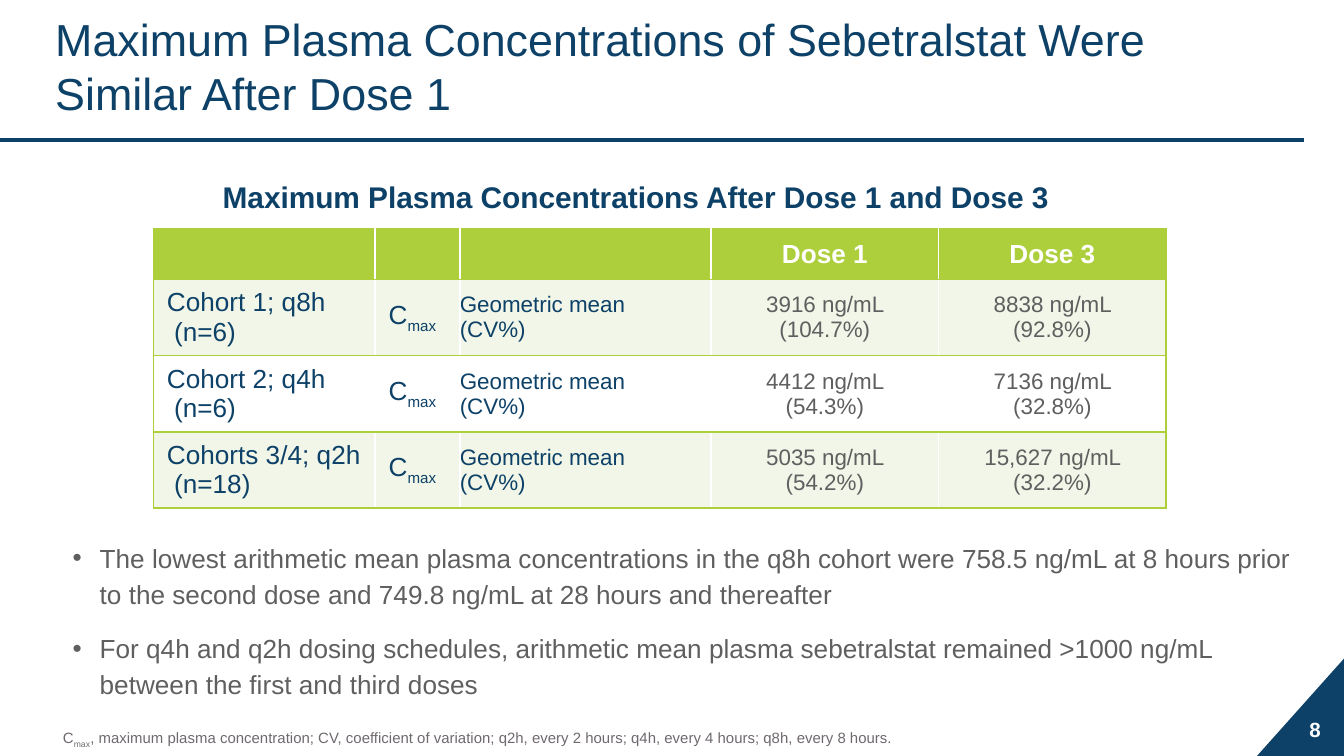
"""Build the slide on maximum plasma concentrations after dose 1 and dose 3."""
from typing import NamedTuple

from lxml.etree import SubElement
from pptx import Presentation
from pptx.dml.color import RGBColor
from pptx.enum.shapes import MSO_CONNECTOR as Connector, MSO_SHAPE as Preset
from pptx.enum.text import MSO_ANCHOR as Anchor, MSO_AUTO_SIZE as AutoSize, PP_ALIGN as Align
from pptx.oxml.ns import qn
from pptx.util import Cm, Pt

COLORS = {
    "navy": "0D4167",
    "green": "ADCF3B",
    "pale": "F1F6E8",
    "white": "FFFFFF",
    "grey": "5F5F5F",
    "note": "6F696F",
}


class Place(NamedTuple):
    left: float
    top: float
    width: float
    height: float


class Style(NamedTuple):
    size: float
    color: str
    bold: bool = False
    align: Align = Align.LEFT


class Cohort(NamedTuple):
    name: str
    count: str
    dose_1: str
    dose_3: str


TITLE = Style(24, "navy")
CAPTION = Style(16, "navy", True, Align.CENTER)
HEADER = Style(14, "white", True, Align.CENTER)
LABEL = Style(14, "navy")
MEASURE = Style(12, "navy")
VALUE = Style(12, "grey", False, Align.CENTER)
BULLET = Style(14, "grey")
FOOTNOTE = Style(8, "note")
PAGE_NUMBER = Style(11, "white", True, Align.CENTER)

COHORTS = [
    Cohort("Cohort 1; q8h", " (n=6)", "3916 ng/mL (104.7%)", "8838 ng/mL (92.8%)"),
    Cohort("Cohort 2; q4h", " (n=6)", "4412 ng/mL (54.3%)", "7136 ng/mL (32.8%)"),
    Cohort("Cohorts 3/4; q2h", " (n=18)", "5035 ng/mL (54.2%)", "15,627 ng/mL (32.2%)"),
]
COLUMN_WIDTHS = [4.19, 1.6, 4.75, 4.3, 4.3]
HEADER_HEIGHT, COHORT_HEIGHT = 0.96, 1.37
BULLETS = [
    "The lowest arithmetic mean plasma concentrations in the q8h cohort were 758.5 ng/mL "
    "at 8 hours prior to the second dose and 749.8 ng/mL at 28 hours and thereafter",
    "For q4h and q2h dosing schedules, arithmetic mean plasma sebetralstat remained "
    ">1000 ng/mL between the first and third doses",
]
ABBREVIATIONS = (
    ", maximum plasma concentration; CV, coefficient of variation; q2h, every 2 hours; "
    "q4h, every 4 hours; q8h, every 8 hours."
)


def color(name: str) -> RGBColor:
    """Return the named colour."""
    return RGBColor.from_string(COLORS[name])


def move(shape, place: Place) -> None:
    """Put a shape at a place given in centimetres."""
    shape.left, shape.top, shape.width, shape.height = map(Cm, place)


def format_para(para, style: Style) -> None:
    """Apply a text style to a paragraph."""
    para.alignment = style.align
    para.font.name = "Arial"
    para.font.size = Pt(style.size)
    para.font.bold = style.bold
    para.font.color.rgb = color(style.color)


def write(frame, lines: list[str], style: Style) -> None:
    """Fill a text frame with one paragraph for each line."""
    frame.word_wrap = True
    frame.text = "\n".join(lines)
    for para in frame.paragraphs:
        format_para(para, style)


def write_cmax(para, style: Style, rest: str = "") -> None:
    """Write C with a subscript max, then the rest of the line."""
    for text in filter(None, ("C", "max", rest)):
        span = para.add_run()
        span.text = text
        if text == "max":
            span._r.get_or_add_rPr().set("baseline", "-25000")
    format_para(para, style)


def add_box(slide, place: Place):
    """Add a wrapping text box and return its frame."""
    frame = slide.shapes.add_textbox(*map(Cm, place)).text_frame
    frame.word_wrap = True
    return frame


def add_bullet(para) -> None:
    """Give a paragraph a hanging round bullet."""
    props = para._p.get_or_add_pPr()
    props.set("marL", str(Cm(0.51)))
    props.set("indent", str(-Cm(0.51)))
    SubElement(props, qn("a:buFont"), typeface="Arial")
    SubElement(props, qn("a:buChar"), char="•")


def add_border(cell, side: str) -> None:
    """Draw a green line on one side of a cell."""
    line = SubElement(cell._tc.get_or_add_tcPr(), qn(f"a:ln{side}"), w=str(Pt(1)))
    fill = SubElement(line, qn("a:solidFill"))
    SubElement(fill, qn("a:srgbClr"), val=COLORS["green"])


def add_corner(slide) -> None:
    """Draw the corner triangle and the page number."""
    corner = slide.shapes.add_shape(Preset.RIGHT_TRIANGLE, *map(Cm, (23.62, 12.55, 1.88, 1.68)))
    corner.rotation = 270
    corner.shadow.inherit = False
    corner.fill.solid()
    corner.fill.fore_color.rgb = color("navy")
    corner.line.fill.background()
    frame = add_box(slide, Place(24.31, 13.41, 1.09, 0.76))
    frame.vertical_anchor = Anchor.MIDDLE
    write(frame, ["8"], PAGE_NUMBER)


def add_rule(slide) -> None:
    """Draw the line under the title."""
    rule = slide.shapes.add_connector(Connector.STRAIGHT, *map(Cm, (24.64, 2.64, 0, 2.64)))
    rule.line.color.rgb = color("navy")
    rule.line.width = Pt(2)
    SubElement(rule._element.spPr, qn("a:effectLst"))


def add_dose_table(slide) -> None:
    """Build the table of concentrations by cohort and dose."""
    height = HEADER_HEIGHT + COHORT_HEIGHT * len(COHORTS)
    place = Place(2.9, 4.32, sum(COLUMN_WIDTHS), height)
    table = slide.shapes.add_table(len(COHORTS) + 1, len(COLUMN_WIDTHS), *map(Cm, place)).table
    table.first_row = table.horz_banding = False
    for column, width in zip(table.columns, COLUMN_WIDTHS):
        column.width = Cm(width)
    last = len(COLUMN_WIDTHS) - 1
    for index, row in enumerate(table.rows):
        row.height = Cm(COHORT_HEIGHT if index else HEADER_HEIGHT)
        fill = ("pale" if index % 2 else "white") if index else "green"
        for position, cell in enumerate(row.cells):
            cell.vertical_anchor = Anchor.MIDDLE
            sides = "L" * (position == 0) + "R" * (position == last) + "TB"
            for side in sides:
                add_border(cell, side)
            cell.fill.solid()
            cell.fill.fore_color.rgb = color(fill)
    for cell, text in zip(table.rows[0].cells, ["", "", "", "Dose 1", "Dose 3"]):
        write(cell.text_frame, [text], HEADER)
    for index, cohort in enumerate(COHORTS, start=1):
        name, peak, measure, dose_1, dose_3 = table.rows[index].cells
        write(name.text_frame, [cohort.name, cohort.count], LABEL)
        peak.margin_right = measure.margin_left = 0
        write_cmax(peak.text_frame.paragraphs[0], LABEL)
        measure.margin_right = Cm(0.5)
        write(measure.text_frame, ["Geometric mean (CV%)"], MEASURE)
        write(dose_1.text_frame, [cohort.dose_1], VALUE)
        write(dose_3.text_frame, [cohort.dose_3], VALUE)


def main() -> None:
    """Build and save the deck."""
    deck = Presentation()
    deck.slide_width, deck.slide_height = Cm(25.4), Cm(14.29)
    slide = deck.slides.add_slide(deck.slide_layouts[1])
    title, body = slide.placeholders
    add_corner(slide)
    add_rule(slide)

    move(title, Place(0.79, 0.51, 22.45, 1.88))
    title.text_frame.auto_size = AutoSize.NONE
    title.text_frame.vertical_anchor = Anchor.BOTTOM
    heading = "Maximum Plasma Concentrations of Sebetralstat Were Similar After Dose 1"
    write(title.text_frame, [heading], TITLE)

    caption = add_box(slide, Place(3.78, 3.25, 16.48, 0.94))
    write(caption, ["Maximum Plasma Concentrations After Dose 1 and Dose 3"], CAPTION)
    add_dose_table(slide)

    move(body, Place(1.12, 10.03, 23.55, 3.3))
    frame = body.text_frame
    frame.auto_size = AutoSize.NONE
    frame.text = "\n".join(BULLETS)
    for para in frame.paragraphs:
        para.line_spacing = 1.15
        para.space_before, para.space_after = Pt(0), Pt(10)
        add_bullet(para)
        format_para(para, BULLET)

    note = add_box(slide, Place(0.94, 13.59, 23.55, 0.64)).paragraphs[0]
    note.line_spacing = 1.15
    write_cmax(note, FOOTNOTE, ABBREVIATIONS)
    deck.save("out.pptx")


if __name__ == "__main__":
    main()
